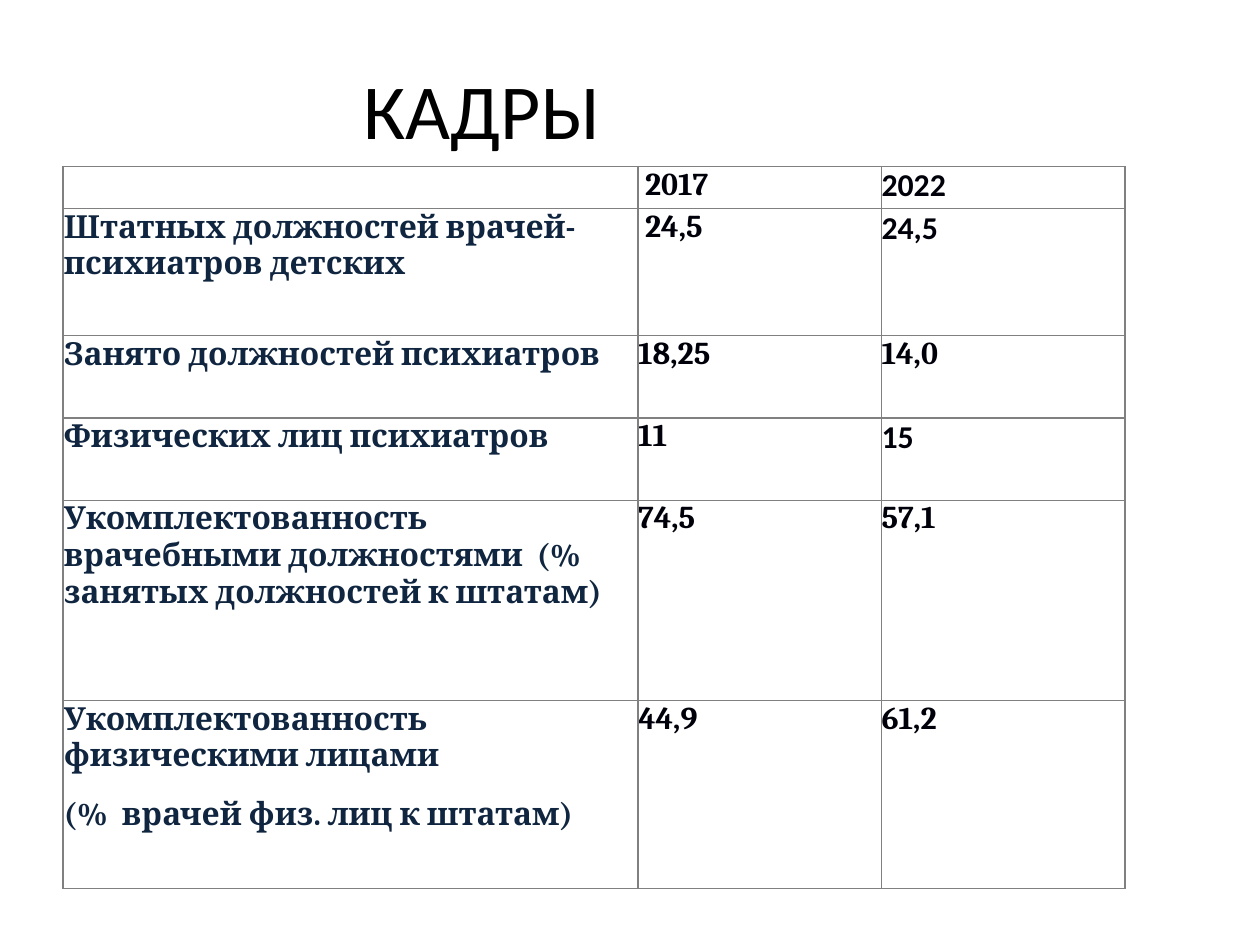
from dataclasses import dataclass

from lxml import etree
from pptx import Presentation
from pptx.dml.color import RGBColor
from pptx.enum.text import MSO_ANCHOR, PP_ALIGN
from pptx.oxml.ns import qn
from pptx.util import Cm, Pt

MIDDLE = MSO_ANCHOR.MIDDLE
CENTER = PP_ALIGN.CENTER


@dataclass
class Theme:
    sans: str = "Calibri"
    serif: str = "Cambria"
    title_color: RGBColor = RGBColor(0, 0, 0)
    label_color: RGBColor = RGBColor(0x10, 0x25, 0x3F)
    value_color: RGBColor = RGBColor(0, 0, 0x0A)
    border: str = "808080"
    title_size: Pt = Pt(49)
    cell_size: Pt = Pt(20)
    space_after: Pt = Pt(14.2)
    border_width: Pt = Pt(1)


theme = Theme()


def style(p, name, size, color, bold=False):
    for r in p.runs:
        r.font.name = name
        r.font.size = size
        r.font.bold = bold
        r.font.color.rgb = color


def add_borders(cell):
    tcPr = cell._tc.get_or_add_tcPr()
    for i, side in enumerate(("a:lnL", "a:lnR", "a:lnT", "a:lnB")):
        ln = etree.Element(qn(side), w=str(theme.border_width))
        fill = etree.SubElement(ln, qn("a:solidFill"))
        etree.SubElement(fill, qn("a:srgbClr"), val=theme.border)
        tcPr.insert(i, ln)


prs = Presentation()
prs.slide_width, prs.slide_height = Cm(28), Cm(21)
s = prs.slides.add_slide(prs.slide_layouts[6])

# Title
tf = s.shapes.add_textbox(Cm(0), Cm(0.84), Cm(21.42), Cm(3.15)).text_frame
tf.word_wrap = True
tf.vertical_anchor = MIDDLE
p = tf.paragraphs[0]
p.text = "КАДРЫ"
p.alignment = CENTER
style(p, theme.sans, theme.title_size, theme.title_color)

# Staffing table: row height in cm, label, 2017, 2022
staffing = [
    (0.94, "", " 2017", "2022"),
    (2.82, "Штатных должностей врачей-психиатров детских", " 24,5", "24,5"),
    (1.83, "Занято должностей психиатров", "18,25", "14,0"),
    (1.83, "Физических лиц психиатров", "11", "15"),
    (4.45, "Укомплектованность врачебными должностями  (% занятых должностей к штатам)",
     "74,5", "57,1"),
    (4.17, "Укомплектованность физическими лицами\n(%  врачей физ. лиц к штатам)",
     "44,9", "61,2"),
]
sans_cells = {(0, 2), (1, 2), (3, 2)}
column_widths = (12.78, 5.41, 5.41)

table = s.shapes.add_table(len(staffing), len(column_widths), Cm(1.4), Cm(3.7),
                           Cm(sum(column_widths)),
                           Cm(sum(row[0] for row in staffing))).table
table.first_row = table.horz_banding = False
for column, width in zip(table.columns, column_widths):
    column.width = Cm(width)

for i, (height, *texts) in enumerate(staffing):
    table.rows[i].height = Cm(height)
    for j, text in enumerate(texts):
        cell = table.cell(i, j)
        is_label = j == 0
        cell.margin_left = cell.margin_top = cell.margin_bottom = Cm(0.02 if is_label else 0)
        cell.margin_right = Cm(0.02)
        cell.fill.background()
        add_borders(cell)
        cell.text_frame.text = text
        font = theme.sans if (i, j) in sans_cells else theme.serif
        color = theme.label_color if is_label else theme.value_color
        for p in cell.text_frame.paragraphs:
            p.space_after = theme.space_after
            style(p, font, theme.cell_size, color, bold=True)

prs.save("out.pptx")
